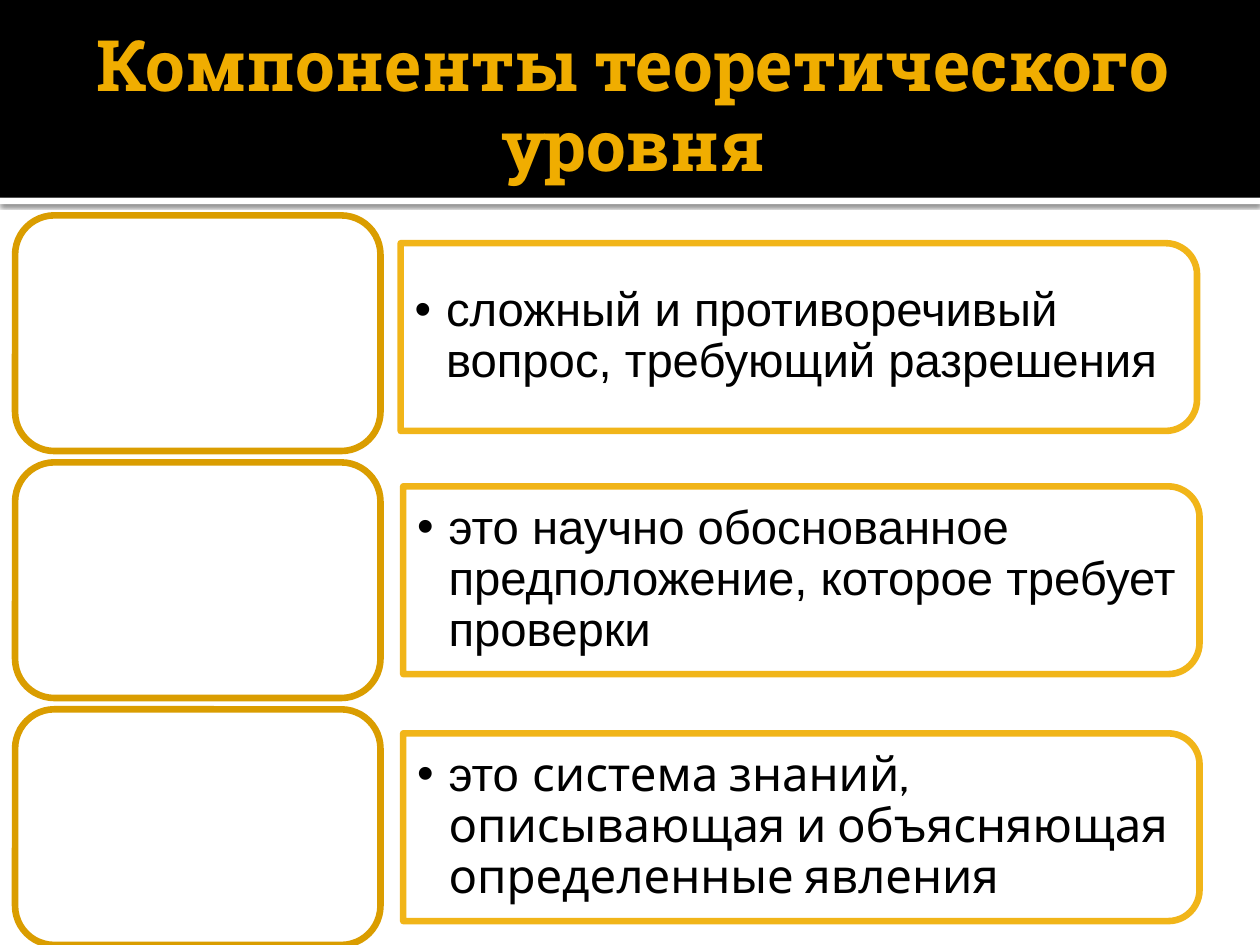
"""Build the slide on the components of the theoretical level."""
from dataclasses import dataclass

from lxml.etree import SubElement
from pptx import Presentation
from pptx.dml.color import RGBColor
from pptx.enum.shapes import MSO_SHAPE
from pptx.enum.text import MSO_ANCHOR, MSO_AUTO_SIZE, PP_ALIGN
from pptx.oxml.ns import qn
from pptx.util import Inches, Pt

GOLD = "F0AD00"
BORDER_WIDTH = 3.78
FIRST_TOP = 1.71
ROW_PITCH = 1.96
LABEL_LEFT, LABEL_WIDTH, LABEL_HEIGHT = 0.12, 2.9, 1.87
PANEL_WIDTH, PANEL_HEIGHT = 6.32, 1.49
TEXT_WIDTH, TEXT_HEIGHT = 6.25, 1.35


@dataclass
class Component:
    """A definition row, as (text, font) runs, with its panel position."""
    runs: list[tuple[str, str]]
    panel_left: float = 3.2
    panel_shift: float = 0


COMPONENTS = [
    Component([("сложный и противоречивый вопрос, требующий разрешения", "Arial")], 3.18, 0.03),
    Component([("это научно обоснованное предположение, которое требует проверки", "Arial")]),
    Component([("это ", "Arial"),
               ("система знаний, описывающая и объясняющая определенные явления", "Cabin")]),
]


def color(value: str) -> RGBColor:
    """Turn a hex string into a colour."""
    return RGBColor.from_string(value)


def set_alpha(fill, percent: int) -> None:
    """Make a solid fill partly transparent."""
    for element in fill._xPr.iter(qn("a:srgbClr")):
        SubElement(element, qn("a:alpha"), val=str(percent * 1000))


def add_box(slide, kind, left: float, top: float, width: float, height: float,
            fill: str, border: str | None = None, alpha: int = 100):
    """Add a filled preset shape with an optional border."""
    shape = slide.shapes.add_shape(kind, Inches(left), Inches(top), Inches(width), Inches(height))
    shape.shadow.inherit = False
    shape.fill.solid()
    shape.fill.fore_color.rgb = color(fill)
    if border:
        shape.line.color.rgb = color(border)
        shape.line.width = Pt(BORDER_WIDTH)
    else:
        shape.line.fill.background()
    if alpha < 100:
        set_alpha(shape.fill, alpha)
    return shape


def add_shadow(shape) -> None:
    """Give a shape a thin soft shadow below it."""
    effects = shape._element.spPr.find(qn("a:effectLst"))
    shadow = SubElement(effects, qn("a:outerShdw"), blurRad=str(Pt(2.5)), dist=str(Pt(0.8)),
                        dir="5400000", algn="tl", rotWithShape="0")
    black = SubElement(shadow, qn("a:srgbClr"), val="000000")
    SubElement(black, qn("a:alpha"), val="60000")


def add_run(paragraph, text: str, *, size: float, font: str, ink: str, bold: bool = False) -> None:
    """Append a formatted run to a paragraph."""
    run = paragraph.add_run()
    run.text = text
    run.font.size = Pt(size)
    run.font.name = font
    run.font.bold = bold
    run.font.color.rgb = color(ink)


def set_frame(frame, left: float, top: float, right: float, bottom: float) -> None:
    """Set the margins of a wrapped, vertically centred text frame."""
    frame.word_wrap = True
    frame.auto_size = MSO_AUTO_SIZE.NONE
    frame.vertical_anchor = MSO_ANCHOR.MIDDLE
    frame.margin_left, frame.margin_top = Inches(left), Inches(top)
    frame.margin_right, frame.margin_bottom = Inches(right), Inches(bottom)


def add_bullet(paragraph) -> None:
    """Give a paragraph a hanging bullet."""
    properties = paragraph._p.get_or_add_pPr()
    properties.set("marL", str(Inches(0.25)))
    properties.set("indent", str(-Inches(0.25)))
    SubElement(properties, qn("a:buFont"), typeface="Arial")
    SubElement(properties, qn("a:buChar"), char="•")


def add_header(slide, text: str) -> None:
    """Draw the black header and put the title on it."""
    add_shadow(add_box(slide, MSO_SHAPE.RECTANGLE, 0, 1.57, 10, 0.05, "FFFFFF"))
    add_box(slide, MSO_SHAPE.RECTANGLE, 0, 0, 10, 1.57, "000000")
    title = slide.shapes.title
    slide.shapes._spTree.append(title._element)
    title.left, title.top = Inches(0.5), Inches(0.17)
    title.width, title.height = Inches(9), Inches(1.37)
    set_frame(title.text_frame, 0.1, 0.05, 0.05, 0.05)
    paragraph = title.text_frame.paragraphs[0]
    paragraph.alignment = PP_ALIGN.CENTER
    paragraph.line_spacing = 0.93
    add_run(paragraph, text, size=40.5, font="Roboto Slab", ink=GOLD, bold=True)


def add_component(slide, component: Component, top: float) -> None:
    """Draw a definition panel, its text and the empty label box."""
    middle = top + LABEL_HEIGHT / 2 + component.panel_shift
    panel = add_box(slide, MSO_SHAPE.ROUND_2_SAME_RECTANGLE,
                    component.panel_left + (PANEL_WIDTH - PANEL_HEIGHT) / 2,
                    middle - PANEL_WIDTH / 2, PANEL_HEIGHT, PANEL_WIDTH, "FFFFFF", GOLD, alpha=90)
    panel.rotation = 90
    set_alpha(panel.line.fill, 90)

    box = slide.shapes.add_textbox(Inches(component.panel_left), Inches(middle - TEXT_HEIGHT / 2),
                                   Inches(TEXT_WIDTH), Inches(TEXT_HEIGHT))
    set_frame(box.text_frame, 0.11, 0.06, 0.11, 0.06)
    paragraph = box.text_frame.paragraphs[0]
    paragraph.level = 1
    paragraph.line_spacing = 0.9
    add_bullet(paragraph)
    for text, font in component.runs:
        add_run(paragraph, text, size=27, font=font, ink="000000")

    add_box(slide, MSO_SHAPE.ROUNDED_RECTANGLE, LABEL_LEFT, top, LABEL_WIDTH, LABEL_HEIGHT,
            "FFFFFF", "DA9D00")


def main() -> None:
    """Build and save the presentation."""
    presentation = Presentation()
    presentation.slide_width, presentation.slide_height = Inches(10), Inches(7.5)
    slide = presentation.slides.add_slide(presentation.slide_layouts[5])
    add_header(slide, "Компоненты теоретического уровня")
    for row, component in enumerate(COMPONENTS):
        add_component(slide, component, FIRST_TOP + row * ROW_PITCH)
    presentation.save("out.pptx")


if __name__ == "__main__":
    main()
